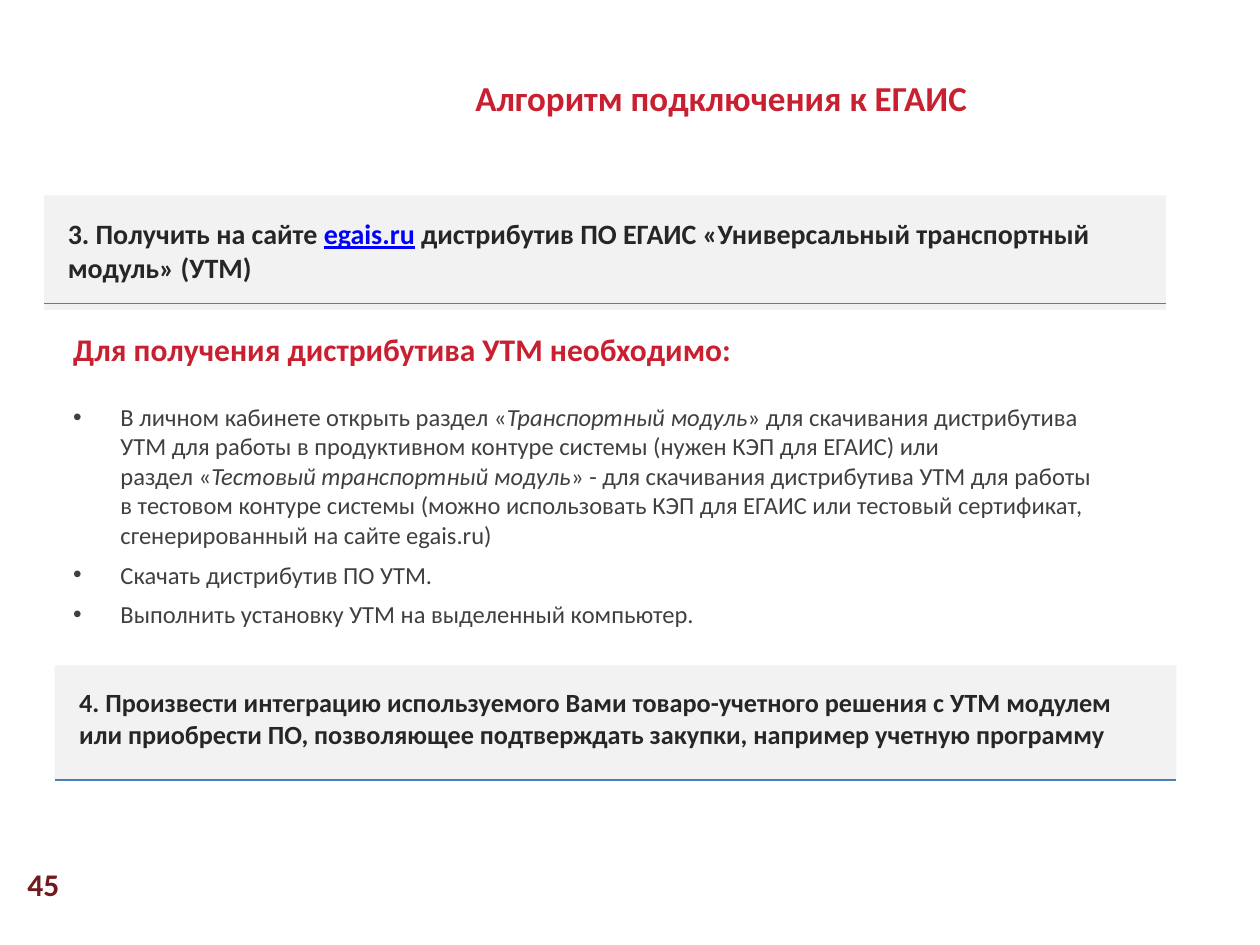
from lxml.etree import SubElement
from pptx import Presentation
from pptx.dml.color import RGBColor
from pptx.enum.shapes import MSO_CONNECTOR, MSO_SHAPE
from pptx.enum.text import MSO_ANCHOR as Anchor, MSO_AUTO_SIZE as AutoSize, PP_ALIGN as Align
from pptx.oxml.ns import qn
from pptx.util import Pt

THEME = {
    "font": "Calibri",
    "red": "C82031", "dark_red": "721A1D", "dark": "262626", "gray": "404040",
    "link": "0000FF", "panel": "F2F2F2", "rule": "4B7EBC",
    "title": 20, "heading": 18, "step_3": 16, "step_4": 15, "body": 14, "number": 18,
}

# A run is (text, changes to the base format); None is a line break.
TITLE = [("Алгоритм подключения к ЕГАИС", {})]
HEADING = [("Для получения дистрибутива УТМ необходимо:", {})]
ITALIC = {"italic": True}
BULLETS = [
    [("В личном кабинете открыть раздел «", {}), ("Транспортный модуль", ITALIC),
     ("» для скачивания дистрибутива УТМ для работы в продуктивном контуре системы "
      "(нужен КЭП для ЕГАИС) или", {}),
     None,
     ("раздел «", {}), ("Тестовый транспортный модуль", ITALIC),
     ("» - для скачивания дистрибутива УТМ для работы в тестовом контуре системы "
      "(можно использовать КЭП для ЕГАИС или тестовый сертификат, "
      "сгенерированный на сайте egais.ru)", {})],
    [("Скачать дистрибутив ПО УТМ.", {})],
    [("Выполнить установку УТМ на выделенный компьютер.", {})],
]
# Each step: panel left, panel top, rule offset, text offset, text height, type size, runs
STEPS = [
    (25.2, 111.6, 61.9, (6.5, 8.6), 46, "step_3",
     [("3. Получить на сайте\u00a0", {}),
      ("egais.ru", {"color": "link", "underline": True}),
      ("\u00a0дистрибутив ПО ЕГАИС «Универсальный транспортный модуль» (УТМ)", {})]),
    (31.2, 380.2, 65.5, (7, 8.6), 44, "step_4",
     [("4. Произвести интеграцию используемого Вами товаро-учетного решения с УТМ модулем "
       "или приобрести ПО, позволяющее подтверждать закупки, например "
       "учетную программу", {})]),
]
NUMBER = [("45", {})]

PANEL_WIDTH, PANEL_HEIGHT, STEP_TEXT_WIDTH = 641, 65.5, 612
BULLET_INDENT = 27


def color(name):
    return RGBColor.from_string(THEME[name])


def write(paragraph, runs, size, color_name, bold=False):
    for piece in runs:
        if piece is None:
            paragraph.add_line_break()
            continue
        text, changes = piece
        run = paragraph.add_run()
        run.text = text
        values = {"name": THEME["font"], "size": Pt(THEME[size]), "bold": bold, **changes}
        run.font.color.rgb = color(values.pop("color", color_name))
        for name, value in values.items():
            setattr(run.font, name, value)


def place(shape, left, top, width, height, anchor=Anchor.TOP):
    """Move a text shape and return its frame, set to wrap without resizing."""
    for name, value in zip(("left", "top", "width", "height"), (left, top, width, height)):
        setattr(shape, name, Pt(value))
    frame = shape.text_frame
    for name, value in {"word_wrap": True, "auto_size": AutoSize.NONE,
                        "vertical_anchor": anchor}.items():
        setattr(frame, name, value)
    return frame


def add_text_box(slide, box, runs, size, color_name, anchor=Anchor.TOP):
    frame = place(slide.shapes.add_textbox(0, 0, 0, 0), *box, anchor)
    write(frame.paragraphs[0], runs, size, color_name, bold=True)


def set_bullet(paragraph, character=None):
    indent = Pt(BULLET_INDENT) if character else 0
    properties = paragraph._p.get_or_add_pPr()
    properties.set("marL", str(int(indent)))
    properties.set("indent", str(int(-indent)))
    if character:
        SubElement(properties, qn("a:buFont")).set("typeface", "Arial")
        SubElement(properties, qn("a:buChar")).set("char", character)
    else:
        SubElement(properties, qn("a:buNone"))


def add_step(slide, left, top, rule_offset, text_offset, text_height, size, runs):
    panel = slide.shapes.add_shape(MSO_SHAPE.RECTANGLE, Pt(left), Pt(top),
                                   Pt(PANEL_WIDTH), Pt(PANEL_HEIGHT))
    panel.shadow.inherit = False
    panel.fill.solid()
    panel.fill.fore_color.rgb = color("panel")
    panel.line.fill.background()
    dx, dy = text_offset
    add_text_box(slide, (left + dx, top + dy, STEP_TEXT_WIDTH, text_height),
                 runs, size, "dark")
    rule_top = Pt(top + rule_offset)
    rule = slide.shapes.add_connector(MSO_CONNECTOR.STRAIGHT, Pt(left + PANEL_WIDTH),
                                      rule_top, Pt(left), rule_top)
    rule.line.color.rgb = color("rule")
    rule.line.width = Pt(0.75)
    SubElement(rule._element.spPr, qn("a:effectLst"))


def fill_body(frame):
    for index, runs in enumerate([HEADING, *BULLETS]):
        is_heading = index == 0
        paragraph = frame.paragraphs[0] if is_heading else frame.add_paragraph()
        paragraph.space_before = Pt(0)
        paragraph.space_after = Pt(19.5 if is_heading else 6)
        set_bullet(paragraph, None if is_heading else "•")
        if is_heading:
            write(paragraph, runs, "heading", "red", bold=True)
        else:
            write(paragraph, runs, "body", "gray")


def main():
    presentation = Presentation()
    presentation.slide_width, presentation.slide_height = Pt(720), Pt(540)
    slide = presentation.slides.add_slide(presentation.slide_layouts[1])

    title = place(slide.shapes.title, 121.7, 40.3, 581, 31.5).paragraphs[0]
    title.alignment = Align.CENTER
    write(title, TITLE, "title", "red", bold=True)
    fill_body(place(slide.placeholders[1], 34.6, 185, 597.6, 179.3))
    for step in STEPS:
        add_step(slide, *step)
    add_text_box(slide, (8.6, 491, 44.6, 28.8), NUMBER, "number", "dark_red", Anchor.MIDDLE)

    presentation.save("out.pptx")


if __name__ == "__main__":
    main()
